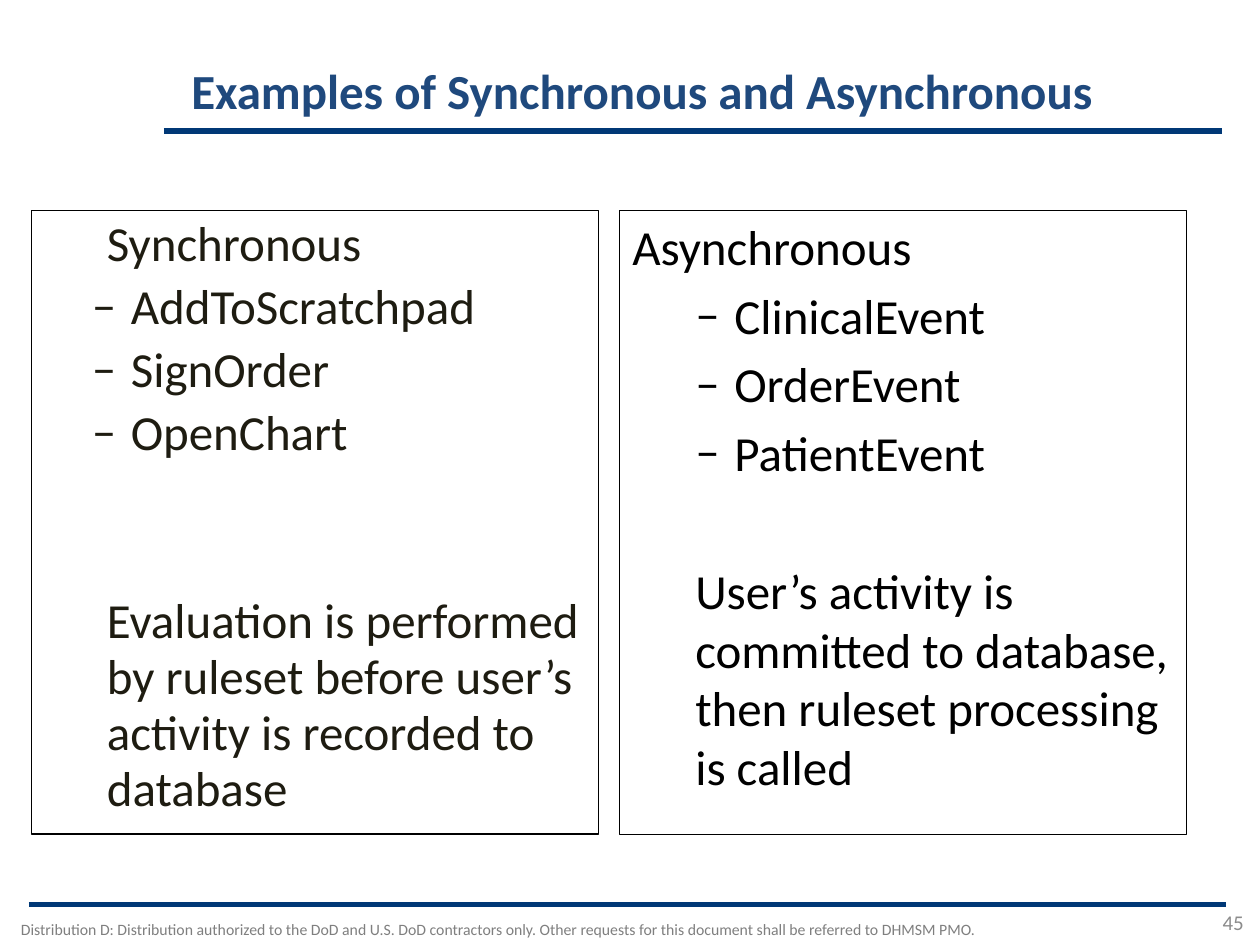
import pptx
import pptx.util
import pptx.dml.color
import pptx.enum.shapes
import pptx.enum.text
import pptx.oxml
import pptx.oxml.ns

Inches, Pt = pptx.util.Inches, pptx.util.Pt
ALIGN = pptx.enum.text.PP_ALIGN
ANCHOR = pptx.enum.text.MSO_ANCHOR

COLORS = {
    "rule": "003876", "title": "1F497D", "footer": "7F7F7F", "number": "8C8C8C",
    "sync": "1E1C11", "async": "000000", "border": "000000",
}


class SlideBuilder:
    def __init__(self, slide, font="Calibri"):
        self.s = slide
        self.font = font

    def color(self, name):
        return pptx.dml.color.RGBColor.from_string(COLORS[name])

    def format_runs(self, p, size, color, bold=False):
        for r in p.runs:
            r.font.name = self.font
            r.font.size = Pt(size)
            r.font.bold = bold
            r.font.color.rgb = self.color(color)

    def rule(self, x1, x2, y):
        line = self.s.shapes.add_connector(
            pptx.enum.shapes.MSO_CONNECTOR.STRAIGHT,
            Inches(x1), Inches(y), Inches(x2), Inches(y))
        line.line.color.rgb = self.color("rule")
        line.line.width = Pt(3)
        line._element.spPr.append(pptx.oxml.parse_xml(
            f'<a:effectLst {pptx.oxml.ns.nsdecls("a")}/>'))

    def text(self, box, text, size, color, align=ALIGN.LEFT,
             anchor=ANCHOR.TOP, bold=False, line_spacing=1.0):
        sp = self.s.shapes.add_textbox(*map(Inches, box))
        tf = sp.text_frame
        tf.word_wrap = True
        tf.vertical_anchor = anchor
        tf.text = text
        p = tf.paragraphs[0]
        p.alignment = align
        p.line_spacing = line_spacing
        self.format_runs(p, size, color, bold)

    def bullet(self, p, color):
        """Put a dash in the paragraph's own colour before its text."""
        ns = pptx.oxml.ns.nsdecls("a")
        for xml in (f'<a:buClr {ns}><a:srgbClr val="{COLORS[color]}"/></a:buClr>',
                    f'<a:buFont {ns} typeface="{self.font}"/>',
                    f'<a:buChar {ns} char="–"/>'):
            p._p.get_or_add_pPr().append(pptx.oxml.parse_xml(xml))

    def panel(self, left, border, color, heading, items, summary, heading_indent,
              item_indent, line_spacing, space, summary_space):
        """Draw a bordered box: heading, dashed items, then a summary set apart."""
        sp = self.s.shapes.add_shape(
            pptx.enum.shapes.MSO_SHAPE.RECTANGLE,
            Inches(left), Inches(1.67), Inches(4.5), Inches(4.95))
        sp.shadow.inherit = False
        sp.fill.background()
        sp.line.color.rgb = self.color("border")
        sp.line.width = Pt(border)
        tf = sp.text_frame
        tf.word_wrap = True
        tf.vertical_anchor = ANCHOR.TOP

        rows = [(heading, heading_indent, 0, 0)]
        rows += [(item, item_indent, -0.31, space) for item in items]
        rows.append((summary, 0.5, 0, summary_space))
        tf.text = "\n".join(row[0] for row in rows)
        for p, (_, margin, indent, before) in zip(tf.paragraphs, rows):
            p.alignment = ALIGN.LEFT
            p.line_spacing = line_spacing
            p.space_before = Pt(before)
            pPr = p._p.get_or_add_pPr()
            pPr.set("marL", str(Inches(margin)))
            pPr.set("indent", str(Inches(indent)))
            if indent:
                self.bullet(p, color)
            self.format_runs(p, 28, color)


def main():
    prs = pptx.Presentation()
    prs.slide_width, prs.slide_height = Inches(10), Inches(7.5)
    b = SlideBuilder(prs.slides.add_slide(prs.slide_layouts[6]))

    b.rule(0.23, 9.73, 7.18)
    b.rule(1.3, 9.7, 1.04)
    b.text((0, 7.25, 7.9, 0.25),
           "Distribution D: Distribution authorized to the DoD and U.S. DoD contractors "
           "only. Other requests for this document shall be referred to DHMSM PMO.",
           9, "footer", align=ALIGN.CENTER)
    b.text((9.14, 7.16, 0.83, 0.31), "45", 12, "number",
           align=ALIGN.RIGHT, anchor=ANCHOR.BOTTOM)
    b.text((1.42, 0.47, 7.67, 0.53), "Examples of Synchronous and Asynchronous",
           28, "title", anchor=ANCHOR.BOTTOM, bold=True, line_spacing=0.9)

    b.panel(0.25, 1, "sync", "Synchronous",
            ["AddToScratchpad", "SignOrder", "OpenChart"],
            "Evaluation is performed by ruleset before user’s activity is "
            "recorded to database",
            heading_indent=0.5, item_indent=0.69, line_spacing=0.95,
            space=4, summary_space=76)
    b.panel(4.92, 0.5, "async", "Asynchronous",
            ["ClinicalEvent", "OrderEvent", "PatientEvent"],
            "User’s activity is committed to database, then ruleset "
            "processing is called",
            heading_indent=0, item_indent=0.81, line_spacing=1.0,
            space=5.6, summary_space=45)

    prs.save("out.pptx")


if __name__ == "__main__":
    main()
